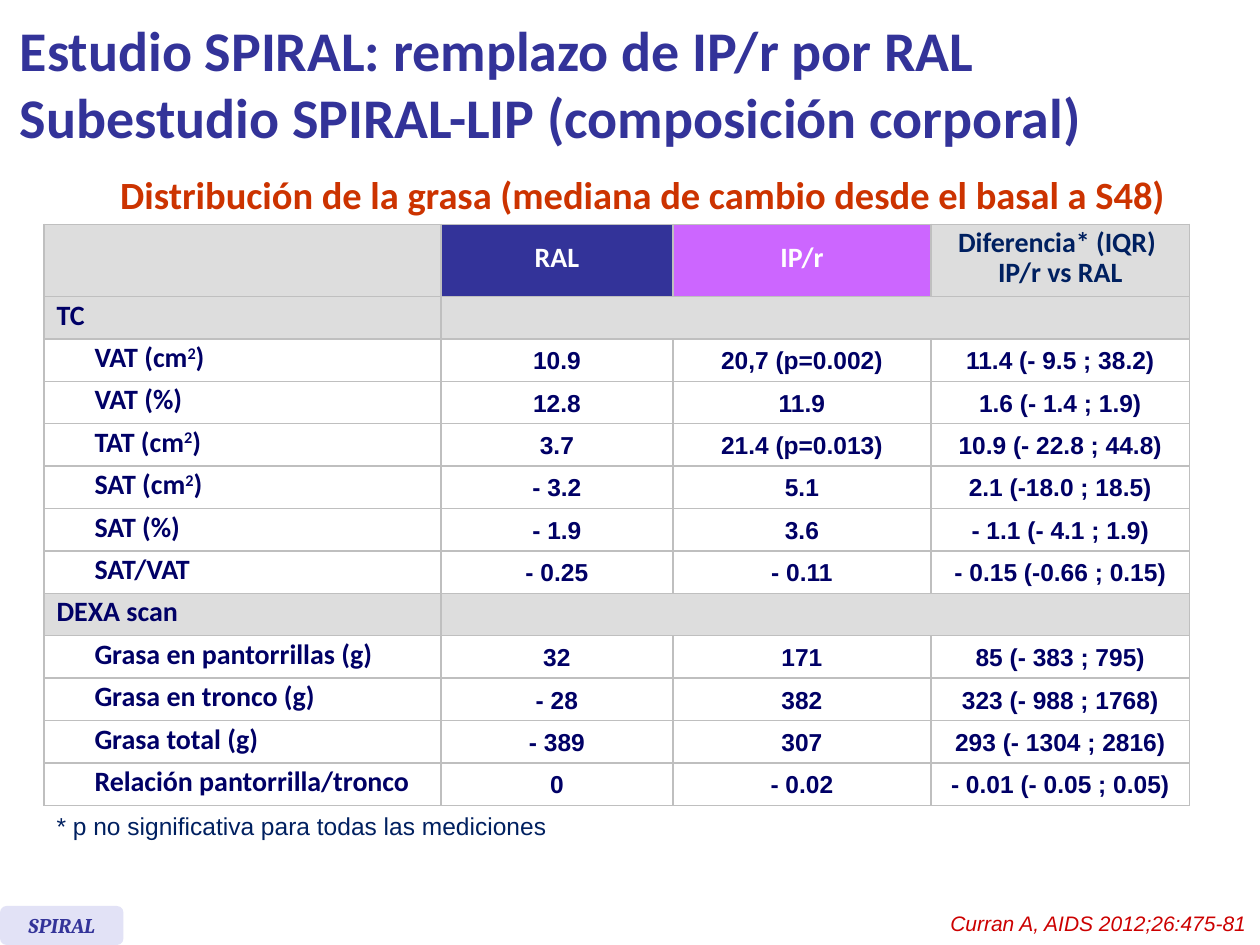
from lxml import etree
from pptx import Presentation, util as u
from pptx.dml.color import RGBColor
from pptx.enum import shapes, text
from pptx.oxml import ns

NAVY = RGBColor(0x33, 0x33, 0x99)
INK = RGBColor(0x00, 0x00, 0x66)
DEEP = RGBColor(0x00, 0x20, 0x60)
RUST = RGBColor(0xCC, 0x33, 0x00)
RED = RGBColor(0xCC, 0x00, 0x00)
PINK = RGBColor(0xCC, 0x66, 0xFF)
PALE = RGBColor(0xE2, 0xE2, 0xF6)
GREY = RGBColor(0xDD, 0xDD, 0xDD)
EDGE = RGBColor(0xBF, 0xBF, 0xBF)
WHITE = RGBColor(0xFF, 0xFF, 0xFF)

WIDE, HIGH = u.Inches(10), u.Inches(7.5)
COL, ROW = WIDE / 100, HIGH / 75
LEFT, MID, RIGHT = text.PP_ALIGN.LEFT, text.PP_ALIGN.CENTER, text.PP_ALIGN.RIGHT

COLS = [3, 28.5, 18.4, 20.5, 20.5]
HEAD, LINE = 5.7, 3.37
HEADS = [("RAL", NAVY, WHITE), ("IP/r", PINK, WHITE),
         ("Diferencia* (IQR) \nIP/r vs RAL", GREY, DEEP)]
ROWS = [
    ("TC",),
    ("VAT (cm^2^)", "10.9", "20,7 (p=0.002)", "11.4 (- 9.5 ; 38.2)"),
    ("VAT (%)", "12.8", "11.9", "1.6 (- 1.4 ; 1.9)"),
    ("TAT (cm^2^)", "3.7", "21.4 (p=0.013)", "10.9 (- 22.8 ; 44.8)"),
    ("SAT (cm^2^)", "- 3.2", "5.1", "2.1 (-18.0 ; 18.5)"),
    ("SAT (%)", "- 1.9", "3.6", "- 1.1 (- 4.1 ; 1.9)"),
    ("SAT/VAT", "- 0.25", "- 0.11", "- 0.15 (-0.66 ; 0.15)"),
    ("DEXA scan",),
    ("Grasa en pantorrillas (g)", "32", "171", "85 (- 383 ; 795)"),
    ("Grasa en tronco (g)", "- 28", "382", "323 (- 988 ; 1768)"),
    ("Grasa total (g)", "- 389", "307", "293 (- 1304 ; 2816)"),
    ("Relación pantorrilla/tronco", "0", "- 0.02", "- 0.01 (- 0.05 ; 0.05)"),
]


def place(x, y, w, h):
    return [u.Emu(round(n)) for n in (x * COL, y * ROW, w * COL, h * ROW)]


def write(frame, words, size=16, face="Calibri", hue=INK, bold=True,
          slant=False, align=LEFT, lead=None):
    for i, line in enumerate(words.split("\n")):
        para = frame.add_paragraph() if i else frame.paragraphs[0]
        para.alignment = align
        if lead:
            para.line_spacing = u.Pt(lead)
        for k, part in enumerate(line.split("^")):
            run = para.add_run()
            run.text = part
            font = run.font
            font.size, font.name = u.Pt(size), face
            font.bold, font.italic = bold, slant
            font.color.rgb = hue
            if k % 2:
                font._element.set("baseline", "30000")


def label(slide, spot, words, anchor=text.MSO_ANCHOR.TOP, **form):
    frame = slide.shapes.add_textbox(*place(*spot)).text_frame
    frame.word_wrap = True
    frame.vertical_anchor = anchor
    write(frame, words, **form)


def badge(slide, spot, words, fill, **form):
    tab = slide.shapes.add_shape(shapes.MSO_SHAPE.ROUNDED_RECTANGLE, *place(*spot))
    tab.adjustments[0] = 0.17
    tab.shadow.inherit = False
    tab.fill.solid()
    tab.fill.fore_color.rgb = fill
    tab.line.fill.background()
    tab.text_frame.word_wrap = False
    tab.text_frame.vertical_anchor = text.MSO_ANCHOR.MIDDLE
    write(tab.text_frame, words, **form)


def edge(cell, bare=""):
    props = cell._tc.get_or_add_tcPr()
    for side in "LRTB":
        line = etree.SubElement(props, ns.qn("a:ln" + side), w=str(u.Pt(1)))
        if side == bare:
            etree.SubElement(line, ns.qn("a:noFill"))
        else:
            fill = etree.SubElement(line, ns.qn("a:solidFill"))
            etree.SubElement(fill, ns.qn("a:srgbClr"), val=str(EDGE))


def dress(cell, fill, words="", bare="", **form):
    edge(cell, bare)
    cell.fill.solid()
    cell.fill.fore_color.rgb = fill
    cell.vertical_anchor = text.MSO_ANCHOR.MIDDLE
    if words:
        write(cell.text_frame, words, lead=17, **form)
    else:
        para = cell.text_frame.paragraphs[0]._p
        etree.SubElement(para, ns.qn("a:endParaRPr"), sz="1000")


def chart(slide):
    deep = HEAD + LINE * len(ROWS)
    spot = place(3.5, 17.8, sum(COLS), deep)
    grid = slide.shapes.add_table(len(ROWS) + 1, len(COLS), *spot).table
    grid.first_row = grid.horz_banding = False
    for col, share in zip(grid.columns, COLS):
        col.width = u.Emu(round(share * COL))
    for i, row in enumerate(grid.rows):
        row.height = u.Emu(round((LINE if i else HEAD) * ROW))

    for c in range(2):
        dress(grid.cell(0, c), GREY)
    grid.cell(0, 0).merge(grid.cell(0, 1))
    for c, (words, fill, hue) in enumerate(HEADS, 2):
        dress(grid.cell(0, c), fill, words, hue=hue, align=MID)

    for r, (name, *vals) in enumerate(ROWS, 1):
        if vals:
            dress(grid.cell(r, 0), WHITE, bare="R")
            dress(grid.cell(r, 1), WHITE, name, bare="L")
            for c, val in enumerate(vals, 2):
                dress(grid.cell(r, c), WHITE, val, size=14, face="Arial", align=MID)
        else:
            for c in range(len(COLS)):
                dress(grid.cell(r, c), GREY, "" if c else name)
            grid.cell(r, 0).merge(grid.cell(r, 1))
            grid.cell(r, 2).merge(grid.cell(r, 4))


def main():
    deck = Presentation()
    deck.slide_width, deck.slide_height = WIDE, HIGH
    slide = deck.slides.add_slide(deck.slide_layouts[6])
    label(slide, (0.6, 0.5, 89.6, 12.1),
          "Estudio SPIRAL: remplazo de IP/r por RAL\n"
          "Subestudio SPIRAL-LIP (composición corporal)",
          anchor=text.MSO_ANCHOR.MIDDLE, size=32, hue=NAVY)
    chart(slide)
    label(slide, (5.6, 13.1, 90.8, 4.7),
          "Distribución de la grasa (mediana de cambio desde el basal a S48)",
          size=22, hue=RUST, align=MID)
    label(slide, (3.5, 63.9, 43.2, 3.4),
          "* p no significativa para todas las mediciones",
          size=14, face="Arial", hue=DEEP, bold=False)
    badge(slide, (0, 71.9, 9.8, 3.1), "SPIRAL", PALE,
          size=12, face="Cambria", hue=NAVY, slant=True, align=MID)
    label(slide, (64.9, 71.8, 35, 3), "Curran A, AIDS 2012;26:475-81",
          size=12, face="Arial", hue=RED, bold=False, slant=True, align=RIGHT)
    deck.save("out.pptx")


if __name__ == "__main__":
    main()
